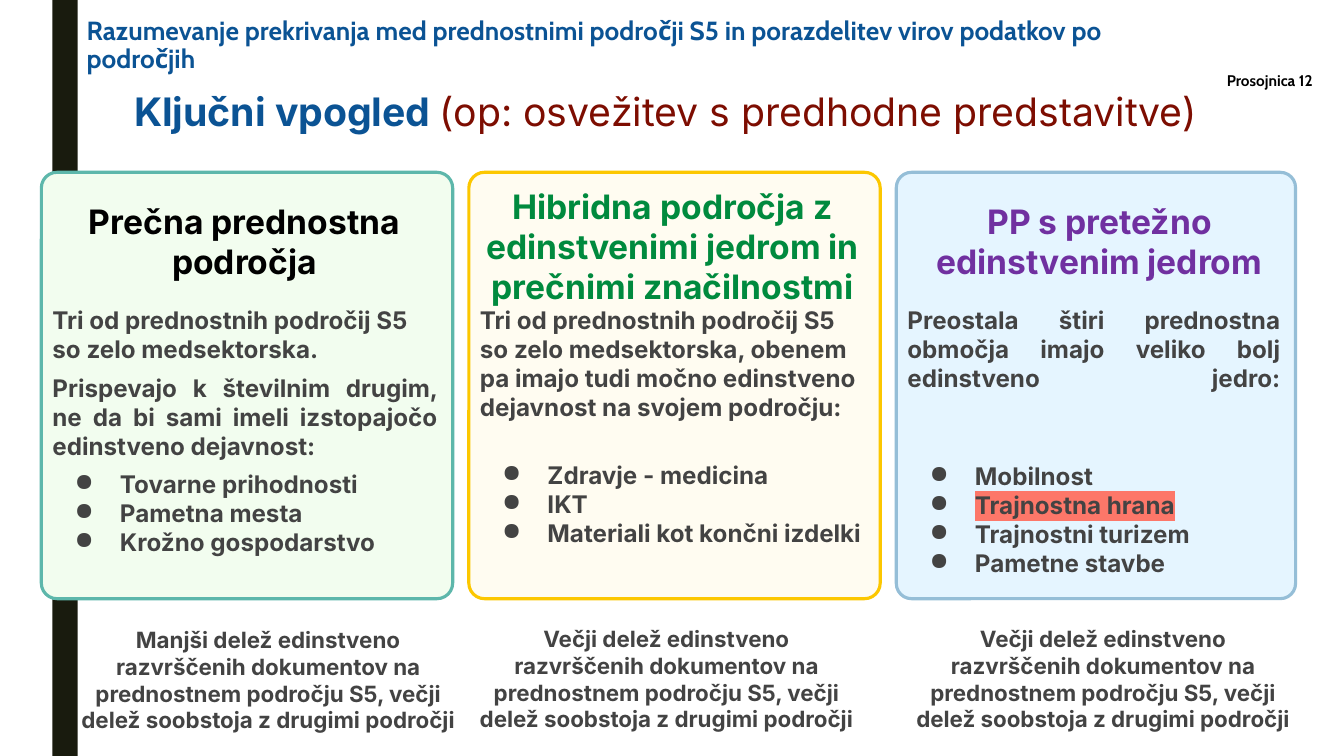
from lxml.etree import SubElement
from pptx import Presentation
from pptx.dml.color import RGBColor
from pptx.enum.shapes import MSO_SHAPE as Shape
from pptx.enum.text import MSO_ANCHOR as Anchor, PP_ALIGN as Align
from pptx.oxml.ns import qn
from pptx.util import Inches, Pt

WHITE = RGBColor(0xFF, 0xFF, 0xFF)
BLACK = RGBColor(0x00, 0x00, 0x00)
BAR = RGBColor(0x19, 0x1B, 0x0E)
BLUE = RGBColor(0x0B, 0x53, 0x94)
MAROON = RGBColor(0x7D, 0x0D, 0x01)
GREY = RGBColor(0x43, 0x43, 0x43)
GREEN = RGBColor(0x00, 0x8A, 0x3E)
PURPLE = RGBColor(0x70, 0x30, 0xA0)
MINT = RGBColor(0xF2, 0xFD, 0xEF)
TEAL = RGBColor(0x5D, 0xB7, 0xAB)
CREAM = RGBColor(0xFF, 0xFC, 0xF1)
GOLD = RGBColor(0xFC, 0xC7, 0x00)
PALE_BLUE = RGBColor(0xE5, 0xF5, 0xFF)
SKY = RGBColor(0x95, 0xBE, 0xD7)
CORAL = RGBColor(0xFD, 0x77, 0x69)

CARD_TOP, CARD_HEIGHT = 1.71, 4.23
BODY_TOP, BODY_HEIGHT = 2.9, 3.03
BODY_SIZE = 17.3
GAP = 6.7
HIGHLIGHTED = "Trajnostna hrana"
SHARE = (" delež edinstveno razvrščenih dokumentov na prednostnem področju S5, "
         "večji delež soobstoja z drugimi področji")

CARDS = [
    dict(left=0.41, width=4.08, fill=MINT, line=TEAL,
         heading="Prečna prednostna področja", heading_box=(0.61, 1.86, 3.63, 0.85),
         heading_color=BLACK,
         intro=[("Tri od prednostnih področij S5 so zelo medsektorska.", Align.LEFT),
                ("Prispevajo k številnim drugim, ne da bi sami imeli izstopajočo "
                 "edinstveno dejavnost:", Align.JUSTIFY)],
         list_gap=GAP,
         areas=["Tovarne prihodnosti", "Pametna mesta", "Krožno gospodarstvo"],
         share="Manjši" + SHARE, share_at=(0.67, 6.08)),
    dict(left=4.65, width=4.08, fill=CREAM, line=GOLD,
         heading="Hibridna področja z edinstvenimi jedrom in prečnimi značilnostmi",
         heading_box=(4.61, 1.71, 4.12, 1.01), heading_color=GREEN,
         intro=[("Tri od prednostnih področij S5 so zelo medsektorska, obenem pa imajo "
                 "tudi močno edinstveno dejavnost na svojem področju:", Align.LEFT)],
         list_gap=27.7,
         areas=["Zdravje - medicina", "IKT", "Materiali kot končni izdelki"],
         share="Večji" + SHARE, share_at=(4.62, 6.07)),
    dict(left=8.89, width=3.96, fill=PALE_BLUE, line=SKY,
         heading="PP s pretežno edinstvenim jedrom", heading_box=(9.09, 1.86, 3.63, 0.56),
         heading_color=PURPLE,
         intro=[("Preostala štiri prednostna območja imajo veliko bolj edinstveno jedro:\v",
                 Align.JUSTIFY)],
         list_gap=27.7,
         areas=["Mobilnost", HIGHLIGHTED, "Trajnostni turizem", "Pametne stavbe"],
         share="Večji" + SHARE, share_at=(8.95, 6.07)),
]


def add_box(slide, left, top, width, height, inset=0.13, anchor=Anchor.TOP, wrap=True):
    box = slide.shapes.add_textbox(Inches(left), Inches(top), Inches(width), Inches(height))
    frame = box.text_frame
    frame.word_wrap = wrap
    frame.vertical_anchor = anchor
    frame.margin_left = frame.margin_right = Inches(inset)
    frame.margin_top = frame.margin_bottom = Inches(inset)
    return frame


def add_paragraph(frame, align=Align.LEFT, before=0, line_spacing=None):
    first = frame.paragraphs[0]
    paragraph = frame.add_paragraph() if first.runs else first
    paragraph.alignment = align
    paragraph.space_before = Pt(before)
    if line_spacing:
        paragraph.line_spacing = line_spacing
    return paragraph


def write(paragraph, text, size=BODY_SIZE, color=GREY, font="Inter", bold=True, highlight=None):
    words, line_break, _ = text.partition("\v")
    run = paragraph.add_run()
    run.text = words
    run.font.size = Pt(size)
    run.font.bold = bold
    run.font.name = font
    run.font.color.rgb = color
    if highlight is not None:
        properties = run.font._element
        mark = SubElement(properties, qn("a:highlight"))
        SubElement(mark, qn("a:srgbClr"), val=str(highlight))
        properties.find(qn("a:solidFill")).addnext(mark)
    if line_break:
        paragraph.add_line_break()


def add_bullet(paragraph):
    properties = paragraph._p.get_or_add_pPr()
    properties.set("marL", str(Inches(0.67)))
    properties.set("indent", str(Inches(-0.45)))
    color = SubElement(properties, qn("a:buClr"))
    SubElement(color, qn("a:srgbClr"), val=str(GREY))
    SubElement(properties, qn("a:buChar"), char="●")


def add_panel(slide, kind, left, top, width, height, fill, line=None):
    shape = slide.shapes.add_shape(kind, Inches(left), Inches(top), Inches(width), Inches(height))
    shape.shadow.inherit = False
    shape.fill.solid()
    shape.fill.fore_color.rgb = fill
    if line is None:
        shape.line.fill.background()
    else:
        shape.line.color.rgb = line
        shape.line.width = Pt(2.25)
    return shape


def add_card(slide, card):
    panel = add_panel(slide, Shape.ROUNDED_RECTANGLE, card["left"], CARD_TOP, card["width"],
                      CARD_HEIGHT, card["fill"], card["line"])
    panel.adjustments[0] = 0.038

    body = add_box(slide, card["left"] - 0.02, BODY_TOP, card["width"], BODY_HEIGHT)
    for index, (text, align) in enumerate(card["intro"]):
        write(add_paragraph(body, align, GAP if index else 0), text)
    for index, area in enumerate(card["areas"]):
        paragraph = add_paragraph(body, before=0 if index else card["list_gap"])
        add_bullet(paragraph)
        write(paragraph, area, highlight=CORAL if area == HIGHLIGHTED else None)

    heading = add_box(slide, *card["heading_box"])
    write(add_paragraph(heading, Align.CENTER), card["heading"], size=24,
          color=card["heading_color"])

    share = add_box(slide, *card["share_at"], 3.98, 1.54)
    write(add_paragraph(share, Align.CENTER), card["share"], size=16)


def add_titles(slide):
    title = add_box(slide, 0.86, 0.18, 10.4, 0.56, inset=0, anchor=Anchor.MIDDLE)
    write(add_paragraph(title, line_spacing=0.89),
          "Razumevanje prekrivanja med prednostnimi področji S5 in porazdelitev virov "
          "podatkov po področjih", size=18.7, color=BLUE, font="Cabin")

    insight = add_paragraph(add_box(slide, 1.2, 0.74, 11.27, 0.83), Align.JUSTIFY)
    write(insight, "Ključni vpogled ", size=28, color=BLUE)
    write(insight, "(op: osvežitev s predhodne predstavitve)", size=28, color=MAROON, bold=False)

    number = add_box(slide, 12.02, 0.66, 1.1, 0.29, inset=0.05, wrap=False)
    number.margin_left = number.margin_right = Inches(0.1)
    write(add_paragraph(number, Align.RIGHT), "Prosojnica 12", size=11, color=BLACK, font="Cabin")


def main():
    presentation = Presentation()
    presentation.slide_width = Inches(13.33)
    presentation.slide_height = Inches(7.5)
    slide = presentation.slides.add_slide(presentation.slide_layouts[6])
    slide.background.fill.solid()
    slide.background.fill.fore_color.rgb = WHITE
    add_panel(slide, Shape.RECTANGLE, 0.52, 0, 0.25, 7.5, BAR)
    add_titles(slide)
    for card in CARDS:
        add_card(slide, card)
    presentation.save("out.pptx")


if __name__ == "__main__":
    main()
